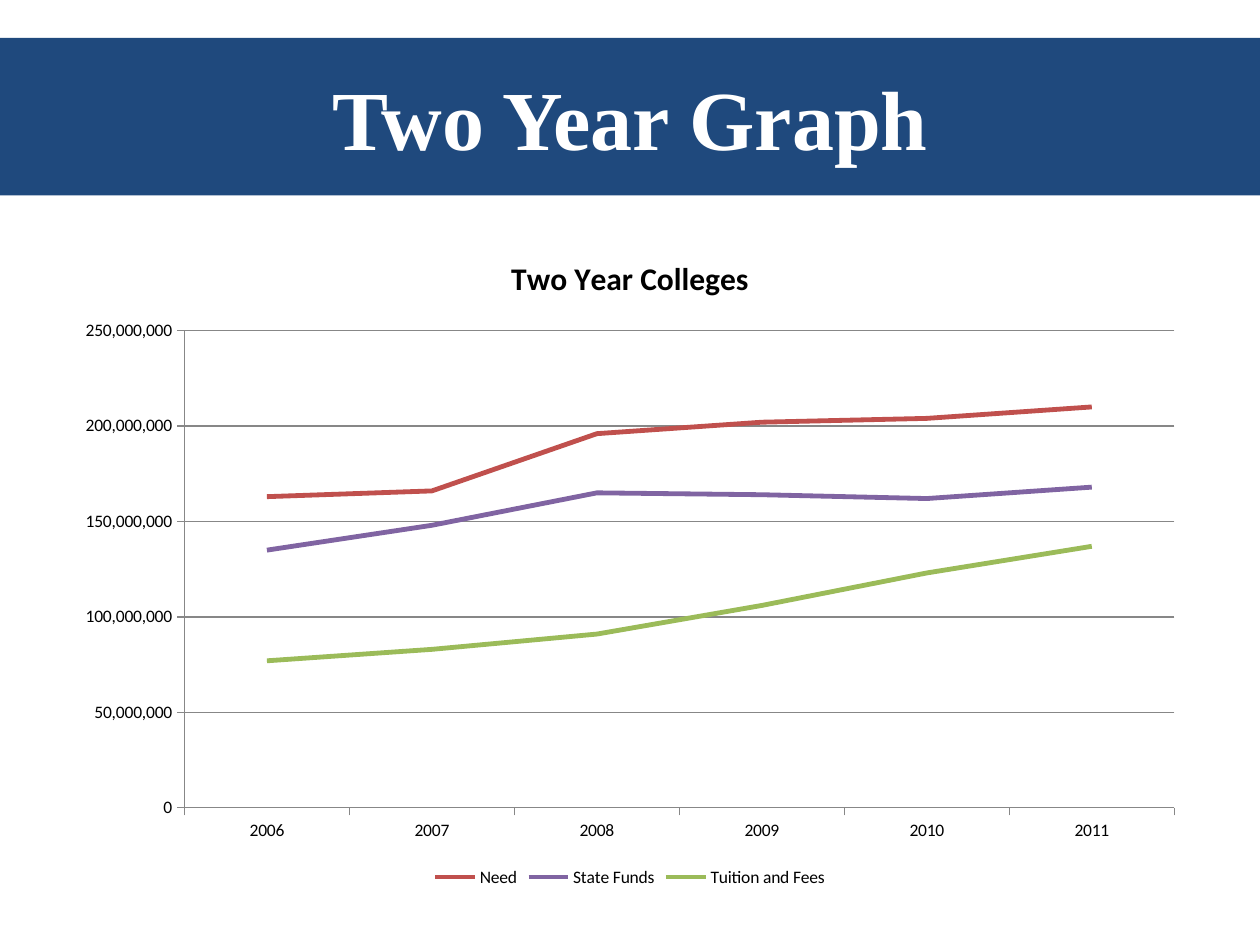
import copy
from dataclasses import dataclass

import pptx
import pptx.chart.data
import pptx.dml.color
import pptx.enum.chart
import pptx.enum.text
import pptx.oxml.ns
import pptx.util


@dataclass(frozen=True)
class Theme:
    banner: str = "1F497D"
    banner_text: str = "FFFFFF"
    chart_text: str = "000000"
    axis: str = "878787"
    title_font: str = "Times New Roman"
    chart_font: str = "Calibri"
    title_size: int = 48
    chart_title_size: int = 18
    chart_size: int = 10
    series_width: float = 2.75
    axis_width: float = 0.75


@dataclass(frozen=True)
class Box:
    left: float
    top: float
    width: float
    height: float


@dataclass(frozen=True)
class Series:
    name: str
    millions: tuple[int, ...]
    color: str


THEME = Theme()
TITLE_BOX = Box(0, 21.6, 720, 90)
CHART_BOX = Box(36, 131.76, 648, 378)
YEARS = [str(year) for year in range(2006, 2012)]
MILLION = 1_000_000
SERIES = (
    Series("Need", (163, 166, 196, 202, 204, 210), "C0504D"),
    Series("State Funds", (135, 148, 165, 164, 162, 168), "8064A2"),
    Series("Tuition and Fees", (77, 83, 91, 106, 123, 137), "9BBB59"),
)


def rgb(color: str) -> pptx.dml.color.RGBColor:
    return pptx.dml.color.RGBColor.from_string(color)


def format_font(font, name: str, size: int, color: str, bold: bool) -> None:
    font.name = name
    font.size = pptx.util.Pt(size)
    font.color.rgb = rgb(color)
    font.bold = bold


def format_line(line, color: str, width: float) -> None:
    line.color.rgb = rgb(color)
    line.width = pptx.util.Pt(width)


def add_banner(slide, box: Box, text: str) -> None:
    title = slide.shapes.title
    title.left, title.top = pptx.util.Pt(box.left), pptx.util.Pt(box.top)
    title.width, title.height = pptx.util.Pt(box.width), pptx.util.Pt(box.height)
    title.fill.solid()
    title.fill.fore_color.rgb = rgb(THEME.banner)
    title.text_frame.text = text
    title.text_frame.vertical_anchor = pptx.enum.text.MSO_ANCHOR.MIDDLE
    paragraph = title.text_frame.paragraphs[0]
    paragraph.alignment = pptx.enum.text.PP_ALIGN.CENTER
    format_font(paragraph.runs[0].font, THEME.title_font, THEME.title_size,
                THEME.banner_text, True)


def move_last_series_to_hidden_axes(chart) -> None:
    qn = pptx.oxml.ns.qn
    plot_area = chart.element.find(f".//{qn('c:plotArea')}")
    line_chart = plot_area.find(qn("c:lineChart"))
    second_chart = copy.deepcopy(line_chart)
    line_chart.remove(line_chart.findall(qn("c:ser"))[-1])
    for series in second_chart.findall(qn("c:ser"))[:-1]:
        second_chart.remove(series)
    line_chart.addnext(second_chart)

    value_axis = plot_area.find(qn("c:valAx"))
    second_value = copy.deepcopy(value_axis)
    second_category = copy.deepcopy(plot_area.find(qn("c:catAx")))
    second_value.remove(second_value.find(qn("c:majorGridlines")))
    second_value.find(qn("c:crosses")).set("val", "max")
    value_axis.addnext(second_value)
    second_value.addnext(second_category)
    for axis in (second_value, second_category):
        axis.find(qn("c:delete")).set("val", "1")
    for part in (second_chart, second_value, second_category):
        for reference in part.iter(qn("c:axId"), qn("c:crossAx")):
            reference.set("val", str(int(reference.get("val")) + 1))


def add_funding_chart(slide, box: Box, title: str, rows: tuple[Series, ...]) -> None:
    data = pptx.chart.data.CategoryChartData(number_format="#,##0")
    data.categories = YEARS
    for row in rows:
        data.add_series(row.name, [value * MILLION for value in row.millions])
    chart = slide.shapes.add_chart(
        pptx.enum.chart.XL_CHART_TYPE.LINE,
        pptx.util.Pt(box.left), pptx.util.Pt(box.top),
        pptx.util.Pt(box.width), pptx.util.Pt(box.height), data).chart
    format_font(chart.font, THEME.chart_font, THEME.chart_size, THEME.chart_text, False)

    chart.has_title = True
    chart.chart_title.include_in_layout = False
    chart.chart_title.text_frame.text = title
    format_font(chart.chart_title.text_frame.paragraphs[0].runs[0].font,
                THEME.chart_font, THEME.chart_title_size, THEME.chart_text, True)
    chart.has_legend = True
    chart.legend.position = pptx.enum.chart.XL_LEGEND_POSITION.BOTTOM
    chart.legend.include_in_layout = False

    for axis in (chart.category_axis, chart.value_axis):
        axis.major_tick_mark = pptx.enum.chart.XL_TICK_MARK.OUTSIDE
        axis.minor_tick_mark = pptx.enum.chart.XL_TICK_MARK.NONE
        format_line(axis.format.line, THEME.axis, THEME.axis_width)
    chart.value_axis.minimum_scale = 0
    chart.value_axis.maximum_scale = 250 * MILLION
    chart.value_axis.major_unit = 50 * MILLION
    chart.value_axis.has_major_gridlines = True
    format_line(chart.value_axis.major_gridlines.format.line, THEME.axis, THEME.axis_width)
    chart.value_axis.tick_labels.number_format = "#,##0"
    chart.value_axis.tick_labels.number_format_is_linked = False

    chart.plots[0].vary_by_categories = False
    for series, row in zip(chart.plots[0].series, rows):
        series.smooth = False
        format_line(series.format.line, row.color, THEME.series_width)
    move_last_series_to_hidden_axes(chart)


def main() -> None:
    presentation = pptx.Presentation()
    presentation.slide_width = pptx.util.Pt(720)
    presentation.slide_height = pptx.util.Pt(540)
    slide = presentation.slides.add_slide(presentation.slide_layouts[5])
    add_banner(slide, TITLE_BOX, "Two Year Graph")
    add_funding_chart(slide, CHART_BOX, "Two Year Colleges", SERIES)
    presentation.save("out.pptx")


if __name__ == "__main__":
    main()
